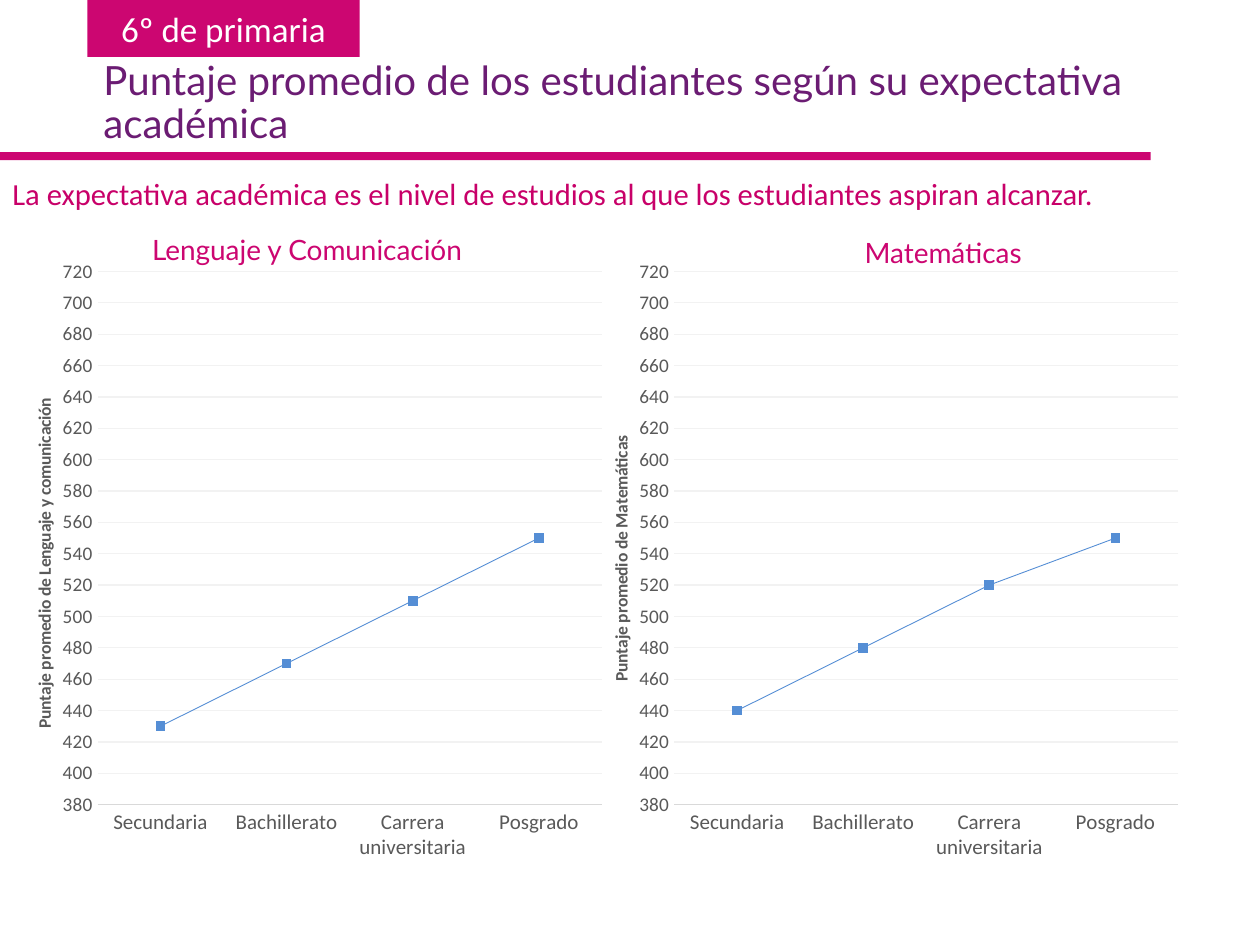
from lxml import etree
from pptx import Presentation
from pptx import util as u
from pptx.chart.data import CategoryChartData
from pptx.dml.color import RGBColor
from pptx.enum import chart as ch, shapes, text
from pptx.oxml import parse_xml
from pptx.oxml.ns import nsdecls

Pt = u.Pt
rgb = RGBColor.from_string
PINK = "CC0671"


def add_text(tf, txt, size, font, color, align=None):
    tf.word_wrap = True
    p = tf.paragraphs[0]
    p.alignment = align
    r = p.add_run()
    r.text = txt
    r.font.size, r.font.name = Pt(size), font
    r.font.color.rgb = rgb(color)
    return p


def make_layout(x, y, w=None, h=None):
    el = parse_xml(f"<c:layout {nsdecls('c')}><c:manualLayout/></c:layout>")
    tags = [("xMode", "edge"), ("yMode", "edge"), ("x", x), ("y", y)]
    if w:
        tags = [("layoutTarget", "inner")] + tags + [("w", w), ("h", h)]
    for tag, val in tags:
        etree.SubElement(el[0], "{%s}%s" % (el.nsmap["c"], tag)).set("val", str(val))
    return el


prs = Presentation()
prs.slide_width, prs.slide_height = Pt(720), Pt(540)
s = prs.slides.add_slide(prs.slide_layouts[6])

for x, y, w, h, label in [(50, 0, 155.5, 32.5, "6º de primaria"), (0, 87, 657.5, 4.5, None)]:
    sp = s.shapes.add_shape(shapes.MSO_SHAPE.RECTANGLE, Pt(x), Pt(y), Pt(w), Pt(h))
    sp.shadow.inherit = False
    sp.fill.solid()
    sp.fill.fore_color.rgb = rgb(PINK)
    sp.line.fill.background()
    if label:
        sp.text_frame.vertical_anchor = text.MSO_ANCHOR.MIDDLE
        add_text(sp.text_frame, label, 20, "Calibri", "FFFFFF", text.PP_ALIGN.CENTER)

tb = s.shapes.add_textbox(Pt(52), Pt(31), Pt(620.5), Pt(66))
p = add_text(tb.text_frame, "Puntaje promedio de los estudiantes según su expectativa académica",
             23, "Lato", "6B1C73")
p.line_spacing = 0.9

tb = s.shapes.add_textbox(0, Pt(96.5), Pt(720), Pt(29))
add_text(tb.text_frame,
         "La expectativa académica es el nivel de estudios al que los estudiantes aspiran alcanzar.",
         17.5, "Calibri", "C80069")

cats = ["Secundaria", "Bachillerato", "Carrera universitaria", "Posgrado"]
panels = [
    ("Lenguaje y Comunicación", 78, 129.5, "Puntaje promedio de Lenguaje y comunicación",
     -0.5, 0.24, [430, 470, 510, 550]),
    ("Matemáticas", 441.5, 131, "Puntaje promedio de Matemáticas",
     329, 0.3, [440, 480, 520, 550]),
]
for heading, x, y, axis_title, chart_x, title_y, vals in panels:
    tb = s.shapes.add_textbox(Pt(x), Pt(y), Pt(195), Pt(31))
    p = add_text(tb.text_frame, heading, 16, "Lato", PINK, text.PP_ALIGN.CENTER)
    p.space_before = Pt(10)

    cd = CategoryChartData()
    cd.categories = cats
    cd.add_series("Puntaje promedio", vals)
    chart = s.shapes.add_chart(ch.XL_CHART_TYPE.LINE_MARKERS, Pt(chart_x), Pt(139),
                               Pt(351.5), Pt(360.5), cd).chart
    chart.has_legend = False
    chart.has_title = False
    chart.font.size, chart.font.name = Pt(10), "Calibri"
    plot = chart.plots[0]
    plot.vary_by_categories = False
    area = chart._chartSpace.chart.plotArea
    for old in area.findall("{*}layout"):
        area.remove(old)
    area.insert(0, make_layout(0.16, 0.02, 0.82, 0.87))

    ser = plot.series[0]
    ser.smooth = False
    ser.format.line.width = Pt(0.5)
    ser.format.line.color.rgb = rgb("558ED5")
    ser.marker.style, ser.marker.size = ch.XL_MARKER_STYLE.SQUARE, 5
    ser.marker.format.fill.solid()
    ser.marker.format.fill.fore_color.rgb = rgb("558ED5")
    ser.marker.format.line.color.rgb = rgb("558ED5")

    cat, val = chart.category_axis, chart.value_axis
    for axis, size in [(cat, 12), (val, 11)]:
        axis.major_tick_mark = axis.minor_tick_mark = ch.XL_TICK_MARK.NONE
        font = axis.tick_labels.font
        font.size, font.name = Pt(size), "Calibri"
        font.color.rgb = rgb("595959")
    cat.format.line.width = Pt(0.75)
    cat.format.line.color.rgb = rgb("D9D9D9")
    val.format.line.fill.background()
    val.minimum_scale, val.maximum_scale, val.major_unit = 380, 730, 20
    val.major_gridlines.format.line.width = Pt(0.75)
    val.major_gridlines.format.line.color.rgb = rgb("F2F2F2")

    tf = val.axis_title.text_frame
    r = tf.paragraphs[0].add_run()
    r.text = axis_title
    r.font.size, r.font.name, r.font.bold = Pt(10), "Calibri", True
    r.font.color.rgb = rgb("595959")
    body = tf._txBody.bodyPr
    body.set("rot", "-5400000")
    body.set("vert", "horz")
    title = val.axis_title._element
    for old in title.findall("{*}layout"):
        title.remove(old)
    title.find("{*}tx").addnext(make_layout(0.05, title_y))

prs.save("out.pptx")
